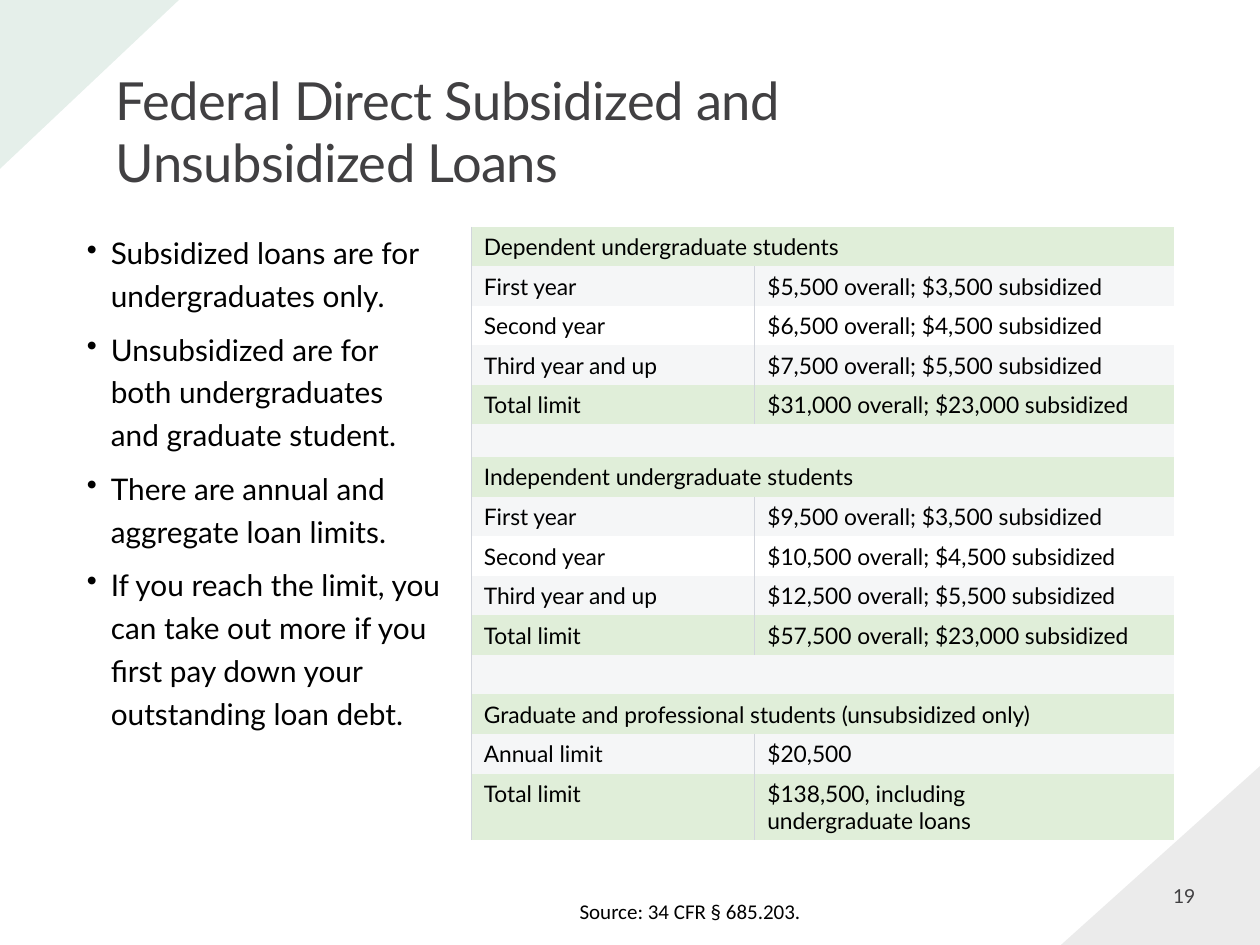
from lxml.etree import SubElement
from pptx import Presentation
from pptx.dml.color import RGBColor
from pptx.enum.shapes import MSO_SHAPE
from pptx.enum.text import MSO_ANCHOR
from pptx.oxml.ns import qn
from pptx.util import Inches, Pt

BLACK = RGBColor(0x00, 0x00, 0x00)
CHARCOAL = RGBColor(0x41, 0x40, 0x42)
DARK_GREEN = RGBColor(0x05, 0x68, 0x39)
PALE_GREEN = RGBColor(0xE0, 0xEE, 0xD9)
PALE_GRAY = RGBColor(0xF5, 0xF6, 0xF7)
BORDER_GRAY = RGBColor(0xD2, 0xD5, 0xDC)


def write_text(paragraph, text, size, color=BLACK, name="Lato", **spacing):
    """Fill a paragraph and format all its runs; spacing holds paragraph formats."""
    paragraph.text = text
    for key, value in spacing.items():
        setattr(paragraph, key, value)
    for run in paragraph.runs:
        for key, value in {"size": Pt(size), "name": name, "bold": False}.items():
            setattr(run.font, key, value)
        run.font.color.rgb = color


def prepare_frame(shape, box, top_inset=0.0):
    shape.left, shape.top, shape.width, shape.height = map(Inches, box)
    frame = shape.text_frame
    formats = {"word_wrap": True, "margin_left": 0, "margin_right": 0,
               "margin_top": Inches(top_inset), "margin_bottom": 0,
               "vertical_anchor": MSO_ANCHOR.TOP}
    for key, value in formats.items():
        setattr(frame, key, value)
    return frame


presentation = Presentation()
presentation.slide_width = Inches(10)
presentation.slide_height = Inches(7.5)
slide = presentation.slides.add_slide(presentation.slide_layouts[5])

# Corner triangles, behind everything else
corners = [
    ((0.04, -0.04, 1.34, 1.42), 90, False, DARK_GREEN),
    ((8.42, 6.08, 1.58, 1.42), 0, True, CHARCOAL),
]
for box, rotation, mirrored, color in corners:
    triangle = slide.shapes.add_shape(MSO_SHAPE.RIGHT_TRIANGLE, *map(Inches, box))
    triangle.rotation = rotation
    triangle.shadow.inherit = False
    triangle.line.fill.background()
    triangle.fill.solid()
    triangle.fill.fore_color.rgb = color
    fill_color = triangle._element.spPr.find(qn("a:solidFill"))[0]
    SubElement(fill_color, qn("a:alpha"), val="10000")
    if mirrored:
        triangle._element.spPr.find(qn("a:xfrm")).set("flipH", "1")
    slide.shapes._spTree.insert(2, triangle._element)

# Title
title_frame = prepare_frame(slide.shapes.title, (0.92, 0.48, 5.55, 1.05), 0.07)
title_frame.vertical_anchor = MSO_ANCHOR.BOTTOM
title = title_frame.paragraphs[0]
write_text(title, "Federal Direct Subsidized and Unsubsidized Loans", 30, CHARCOAL,
           line_spacing=Pt(35), alignment=1)
title.runs[0].font._element.set("spc", "-35")

# Page number and source
page_box = slide.shapes.add_textbox(0, 0, 0, 0)
page_frame = prepare_frame(page_box, (9.31, 7.01, 0.22, 0.21), 0.01)
write_text(page_frame.paragraphs[0], "19", 11, CHARCOAL)

source_box = slide.shapes.add_textbox(0, 0, 0, 0)
source_frame = prepare_frame(source_box, (4.6, 7.16, 1.8, 0.19))
write_text(source_frame.paragraphs[0], "Source: 34 CFR § 685.203.", 12,
           name="Calibri", line_spacing=Pt(12.4))

# Loan limits: a heading or an empty row spans both columns
YEARS = ["First year", "Second year", "Third year and up", "Total limit"]
dependent = ["$5,500 overall; $3,500 subsidized", "$6,500 overall; $4,500 subsidized",
             "$7,500 overall; $5,500 subsidized", "$31,000 overall; $23,000 subsidized"]
independent = ["$9,500 overall; $3,500 subsidized", "$10,500 overall; $4,500 subsidized",
               "$12,500 overall; $5,500 subsidized", "$57,500 overall; $23,000 subsidized"]
rows = [
    ("Dependent undergraduate students", None), *zip(YEARS, dependent),
    ("", None),
    ("Independent undergraduate students", None), *zip(YEARS, independent),
    ("", None),
    ("Graduate and professional students (unsubsidized only)", None),
    ("Annual limit", "$20,500"),
    ("Total limit", "$138,500, including\vundergraduate loans"),
]
TABLE_HEIGHT = 4.87
special_heights = {5: 0.26, len(rows) - 1: 0.53}
row_height = (TABLE_HEIGHT - sum(special_heights.values())) / (len(rows) - len(special_heights))

table_shape = slide.shapes.add_table(len(rows), 2, Inches(3.74), Inches(1.8),
                                     Inches(5.58), Inches(TABLE_HEIGHT))
table = table_shape.table
table.first_row = table.horz_banding = False
NO_STYLE = "{2D5ABB26-0587-4C30-8999-92F81FD0307C}"
table._tbl.tblPr.find(qn("a:tableStyleId")).text = NO_STYLE
for column, width in zip(table.columns, (2.25, 3.33)):
    column.width = Inches(width)

for row_index, (label, amount) in enumerate(rows):
    table.rows[row_index].height = Inches(special_heights.get(row_index, row_height))
    spans = amount is None
    if spans:
        table.cell(row_index, 0).merge(table.cell(row_index, 1))
    for column_index, text in enumerate((label, amount or "")):
        cell = table.cell(row_index, column_index)
        margins = {"margin_left": Inches(0.1), "margin_right": 0,
                   "margin_top": Inches(0.05), "margin_bottom": 0}
        for key, value in margins.items():
            setattr(cell, key, value)
        paragraph = cell.text_frame.paragraphs[0]
        if text:
            write_text(paragraph, text, 13)
        else:
            SubElement(paragraph._p, qn("a:endParaRPr"), sz="1000")

        if column_index == 0:
            for edge in ("a:lnL",) if spans else ("a:lnL", "a:lnR"):
                line = SubElement(cell._tc.get_or_add_tcPr(), qn(edge), w=str(Pt(0.75)))
                line_fill = SubElement(line, qn("a:solidFill"))
                SubElement(line_fill, qn("a:srgbClr"), val=str(BORDER_GRAY))
        if label == "Second year":
            cell.fill.background()
        else:
            highlighted = label == "Total limit" or (spans and label)
            cell.fill.solid()
            cell.fill.fore_color.rgb = PALE_GREEN if highlighted else PALE_GRAY

# Bullets
bullets = [
    "Subsidized loans are for undergraduates only.",
    "Unsubsidized are for\vboth undergraduates\vand graduate student.",
    "There are annual and aggregate loan limits.",
    "If you reach the limit, you can take out more if you first pay down your "
    "outstanding loan debt.",
]
bullet_box = slide.shapes.add_textbox(0, 0, 0, 0)
bullet_frame = prepare_frame(bullet_box, (0.68, 1.8, 2.94, 5.06), 0.01)
for index, text in enumerate(bullets):
    paragraph = bullet_frame.add_paragraph() if index else bullet_frame.paragraphs[0]
    write_text(paragraph, text, 17, line_spacing=1.2, space_before=Pt(6 if index else 0))
    properties = paragraph._p.get_or_add_pPr()
    properties.set("marL", str(Inches(0.2)))
    properties.set("indent", str(Inches(-0.19)))
    SubElement(properties, qn("a:buChar"), char="•")

presentation.save("out.pptx")
